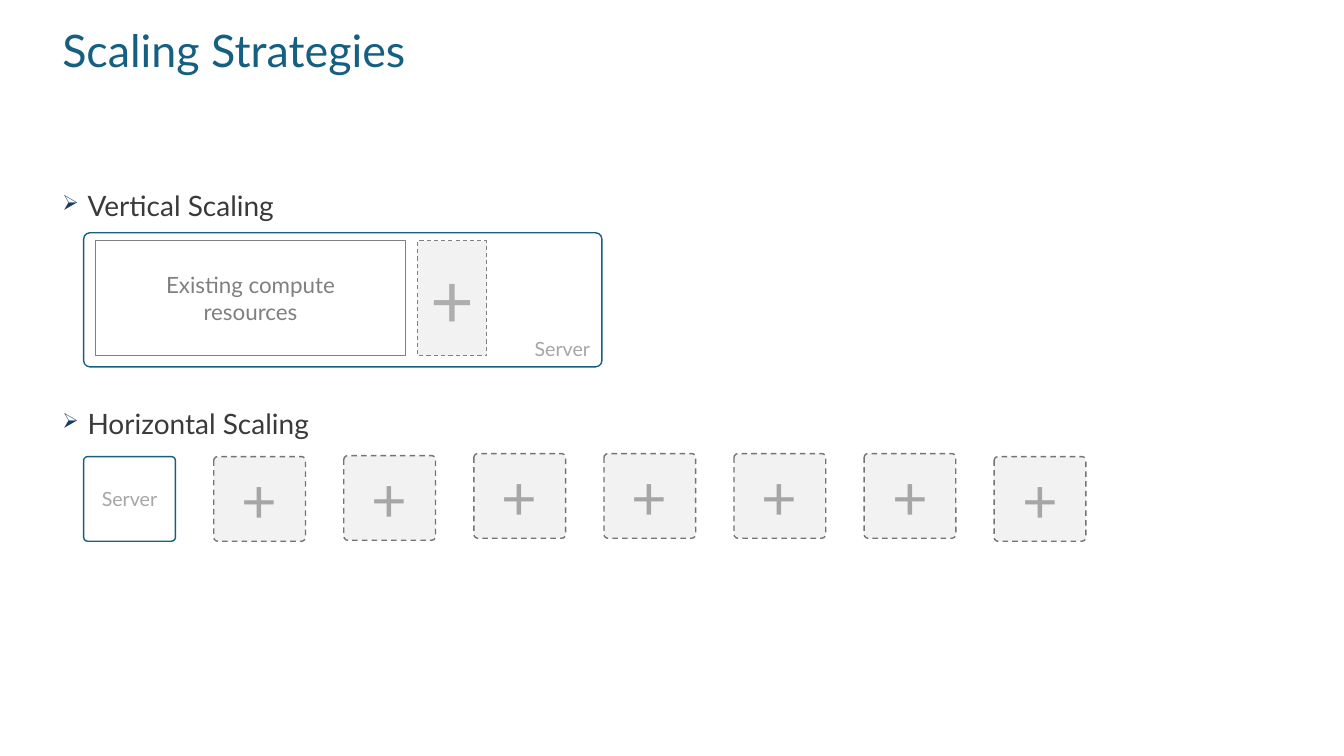
"""Build the Scaling Strategies slide."""
import lxml.etree
import pptx
import pptx.dml.color
import pptx.enum.dml
import pptx.enum.shapes
import pptx.enum.text
import pptx.oxml.ns
import pptx.util

Inches = pptx.util.Inches
Pt = pptx.util.Pt
RGBColor = pptx.dml.color.RGBColor
Align = pptx.enum.text.PP_ALIGN
Anchor = pptx.enum.text.MSO_ANCHOR
Shape = pptx.enum.shapes.MSO_SHAPE

FONT = "Lato"
BLUE = RGBColor(0x15, 0x60, 0x82)
BULLET_BLUE = "163E64"
INK = RGBColor(0x3A, 0x3A, 0x3A)
GRAY = RGBColor(0x80, 0x80, 0x80)
DASH_GRAY = RGBColor(0x74, 0x74, 0x74)
LABEL_GRAY = RGBColor(0xA6, 0xA6, 0xA6)
PLUS_GRAY = RGBColor(0xAE, 0xAE, 0xAE)
PALE = RGBColor(0xF2, 0xF2, 0xF2)

TITLE = "Scaling Strategies"
STRATEGIES = [("Vertical Scaling", 0), ("Horizontal Scaling", 134)]
RESOURCE_LINES = ["Existing compute", "resources"]
SERVER = ["Server"]
PLUS = ["+"]

SERVER_LEFT = 0.83
SERVER_TOP = 4.53
SERVER_SIZE = (0.91, 0.84)
SERVER_PITCH = 1.29
ADDED_SERVER_TOPS = [4.53, 4.52, 4.5, 4.5, 4.5, 4.5, 4.53]
CORNER = 0.047


def add_run(paragraph, text, size, color):
    run = paragraph.add_run()
    run.text = text
    run.font.name = FONT
    run.font.size = Pt(size)
    run.font.color.rgb = color


def add_text_frame(slide, left, top, width, height):
    box = slide.shapes.add_textbox(Inches(left), Inches(top), Inches(width), Inches(height))
    box.text_frame.word_wrap = True
    return box.text_frame


def add_bullet(paragraph):
    properties = paragraph._p.get_or_add_pPr()
    properties.set("marL", str(Inches(0.25)))
    properties.set("indent", str(Inches(-0.25)))
    qn = pptx.oxml.ns.qn
    color = lxml.etree.SubElement(properties, qn("a:buClr"))
    lxml.etree.SubElement(color, qn("a:srgbClr"), val=BULLET_BLUE)
    lxml.etree.SubElement(properties, qn("a:buSzPct"), val="75000")
    lxml.etree.SubElement(properties, qn("a:buChar"), char="➢")


def add_box(group, kind, left, top, width, height, lines, size, color, line_color,
            line_width=1, added=False, align=Align.CENTER, anchor=Anchor.MIDDLE):
    shape = group.shapes.add_shape(kind, Inches(left), Inches(top), Inches(width), Inches(height))
    shape.shadow.inherit = False
    if kind == Shape.ROUNDED_RECTANGLE:
        shape.adjustments[0] = CORNER
    shape.line.color.rgb = line_color
    shape.line.width = Pt(line_width)
    if added:
        shape.fill.solid()
        shape.fill.fore_color.rgb = PALE
        shape.line.dash_style = pptx.enum.dml.MSO_LINE.DASH
    else:
        shape.fill.background()
    frame = shape.text_frame
    frame.word_wrap = True
    frame.vertical_anchor = anchor
    paragraph = frame.paragraphs[0]
    paragraph.alignment = align
    for index, text in enumerate(lines):
        if index:
            paragraph.add_line_break()
        add_run(paragraph, text, size, color)


def add_headings(slide):
    title = add_text_frame(slide, 0.52, 0.24, 9.57, 1.1).paragraphs[0]
    title.line_spacing = 0.9
    add_run(title, TITLE, 32, BLUE)
    body = add_text_frame(slide, 0.52, 1.86, 11.9, 4.89)
    for index, (text, space) in enumerate(STRATEGIES):
        paragraph = body.add_paragraph() if index else body.paragraphs[0]
        add_bullet(paragraph)
        paragraph.line_spacing = 0.9
        paragraph.space_before = Pt(space)
        add_run(paragraph, text, 20, INK)


def add_vertical_scaling(slide):
    group = slide.shapes.add_group_shape()
    add_box(group, Shape.ROUNDED_RECTANGLE, SERVER_LEFT, 2.31, 5.14, 1.33, SERVER, 14,
            LABEL_GRAY, BLUE, align=Align.RIGHT, anchor=Anchor.BOTTOM)
    add_box(group, Shape.RECTANGLE, 0.95, 2.39, 3.07, 1.14, RESOURCE_LINES, 16,
            GRAY, GRAY, line_width=0.75)
    add_box(group, Shape.RECTANGLE, 4.14, 2.39, 0.69, 1.14, PLUS, 54,
            PLUS_GRAY, GRAY, line_width=0.75, added=True)


def add_horizontal_scaling(slide):
    group = slide.shapes.add_group_shape()
    add_box(group, Shape.ROUNDED_RECTANGLE, SERVER_LEFT, SERVER_TOP, *SERVER_SIZE,
            SERVER, 14, LABEL_GRAY, BLUE)
    for index, top in enumerate(ADDED_SERVER_TOPS, start=1):
        add_box(group, Shape.ROUNDED_RECTANGLE, SERVER_LEFT + index * SERVER_PITCH, top,
                *SERVER_SIZE, PLUS, 44, LABEL_GRAY, DASH_GRAY, added=True)


def main():
    presentation = pptx.Presentation()
    presentation.slide_width = Inches(13.33)
    presentation.slide_height = Inches(7.5)
    slide = presentation.slides.add_slide(presentation.slide_layouts[6])
    add_headings(slide)
    add_vertical_scaling(slide)
    add_horizontal_scaling(slide)
    presentation.save("out.pptx")


if __name__ == "__main__":
    main()
